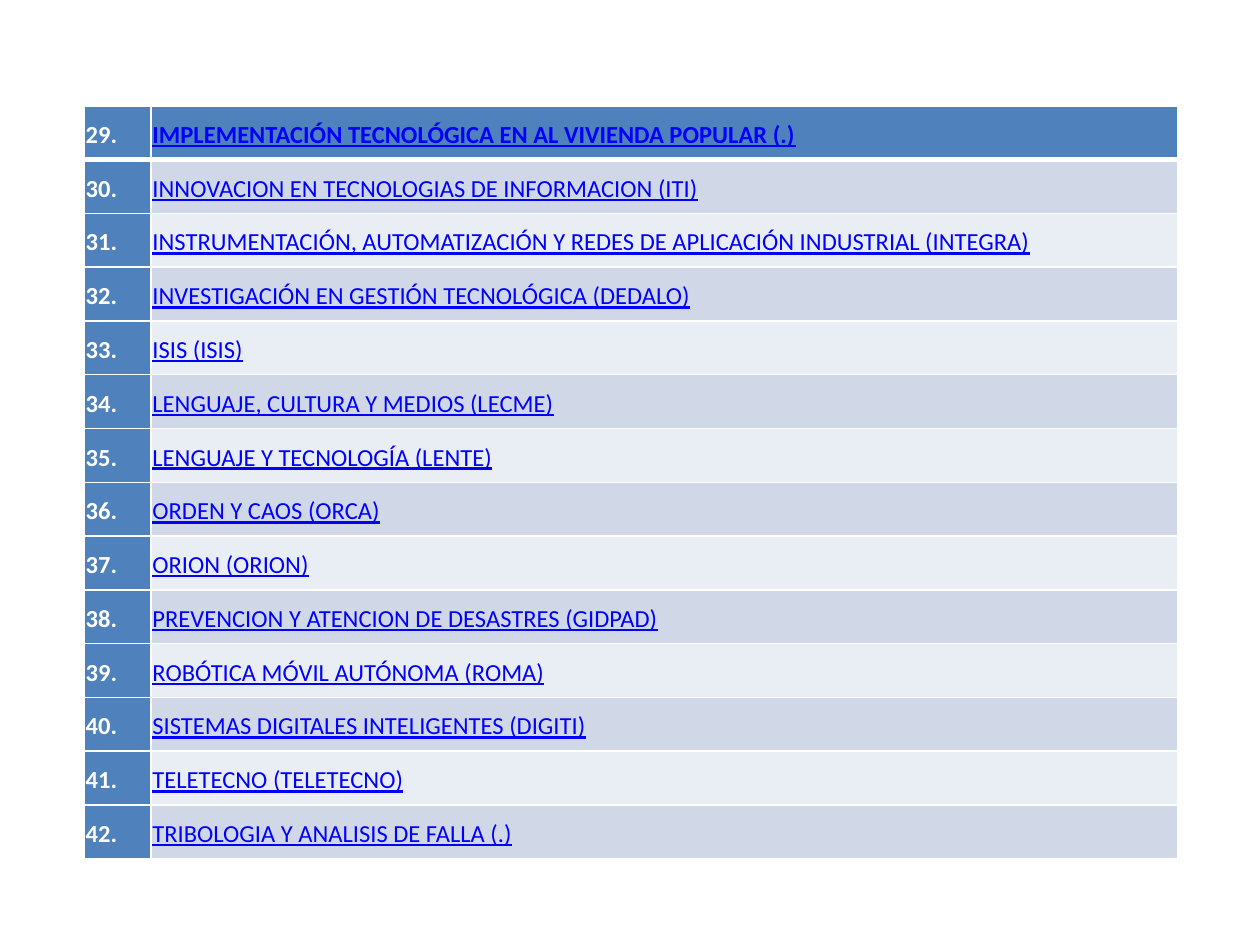
import pptx
import pptx.dml.color
import pptx.enum.text
import pptx.oxml.ns
import pptx.util
from lxml import etree

Inches = pptx.util.Inches
Pt = pptx.util.Pt
RGBColor = pptx.dml.color.RGBColor

WHITE = RGBColor(0xFF, 0xFF, 0xFF)
BLUE = RGBColor(0x4F, 0x81, 0xBD)
LINK_BLUE = RGBColor(0x00, 0x00, 0xFF)
BAND_DARK = RGBColor(0xD0, 0xD8, 0xE8)
BAND_LIGHT = RGBColor(0xE9, 0xED, 0xF4)

FIRST_NUMBER = 29
GROUPS = [
    "IMPLEMENTACIÓN TECNOLÓGICA EN AL VIVIENDA POPULAR (.)",
    "INNOVACION EN TECNOLOGIAS DE INFORMACION (ITI)",
    "INSTRUMENTACIÓN, AUTOMATIZACIÓN Y REDES DE APLICACIÓN INDUSTRIAL (INTEGRA)",
    "INVESTIGACIÓN EN GESTIÓN TECNOLÓGICA (DEDALO)",
    "ISIS (ISIS)",
    "LENGUAJE, CULTURA Y MEDIOS (LECME)",
    "LENGUAJE Y TECNOLOGÍA (LENTE)",
    "ORDEN Y CAOS (ORCA)",
    "ORION (ORION)",
    "PREVENCION Y ATENCION DE DESASTRES (GIDPAD)",
    "ROBÓTICA MÓVIL AUTÓNOMA (ROMA)",
    "SISTEMAS DIGITALES INTELIGENTES (DIGITI)",
    "TELETECNO (TELETECNO)",
    "TRIBOLOGIA Y ANALISIS DE FALLA (.)",
]


def set_borders(cell, **widths):
    """Draw white borders; widths are points for L, R, T and B."""
    properties = cell._tc.get_or_add_tcPr()
    for side, width in widths.items():
        line = etree.SubElement(properties, pptx.oxml.ns.qn(f"a:ln{side}"), w=str(Pt(width)))
        fill = etree.SubElement(line, pptx.oxml.ns.qn("a:solidFill"))
        etree.SubElement(fill, pptx.oxml.ns.qn("a:srgbClr"), val=str(WHITE))


def write_cell(cell, text, *, color, fill, bold=False, underline=False):
    cell.margin_left = cell.margin_right = Inches(0.01)
    cell.margin_top = cell.margin_bottom = Inches(0.01)
    cell.vertical_anchor = pptx.enum.text.MSO_ANCHOR.MIDDLE
    cell.fill.solid()
    cell.fill.fore_color.rgb = fill
    para = cell.text_frame.paragraphs[0]
    para.line_spacing = 1.15
    span = para.add_run()
    span.text = text
    span.font.name = "Calibri"
    span.font.size = Pt(14)
    span.font.bold = bold
    span.font.underline = underline
    span.font.color.rgb = color


deck = pptx.Presentation()
deck.slide_width = Inches(10)
deck.slide_height = Inches(7.5)
page = deck.slides.add_slide(deck.slide_layouts[6])

# Table of research groups
table = page.shapes.add_table(
    len(GROUPS), 2, Inches(0.67), Inches(0.84), Inches(8.68), Inches(5.98)
).table
table.columns[0].width = Inches(0.53)
table.columns[1].width = Inches(8.15)

# One numbered row per group, with a heavier rule under the first
for index, group in enumerate(GROUPS):
    number_cell, name_cell = table.rows[index].cells
    for cell in (number_cell, name_cell):
        set_borders(cell, L=1, R=1, T=3 if index == 1 else 1, B=3 if index == 0 else 1)
    band = BLUE if index == 0 else BAND_DARK if index % 2 else BAND_LIGHT
    write_cell(number_cell, f"{FIRST_NUMBER + index}.", color=WHITE, fill=BLUE, bold=True)
    write_cell(name_cell, group, color=LINK_BLUE, fill=band, bold=index == 0, underline=True)

deck.save("out.pptx")
